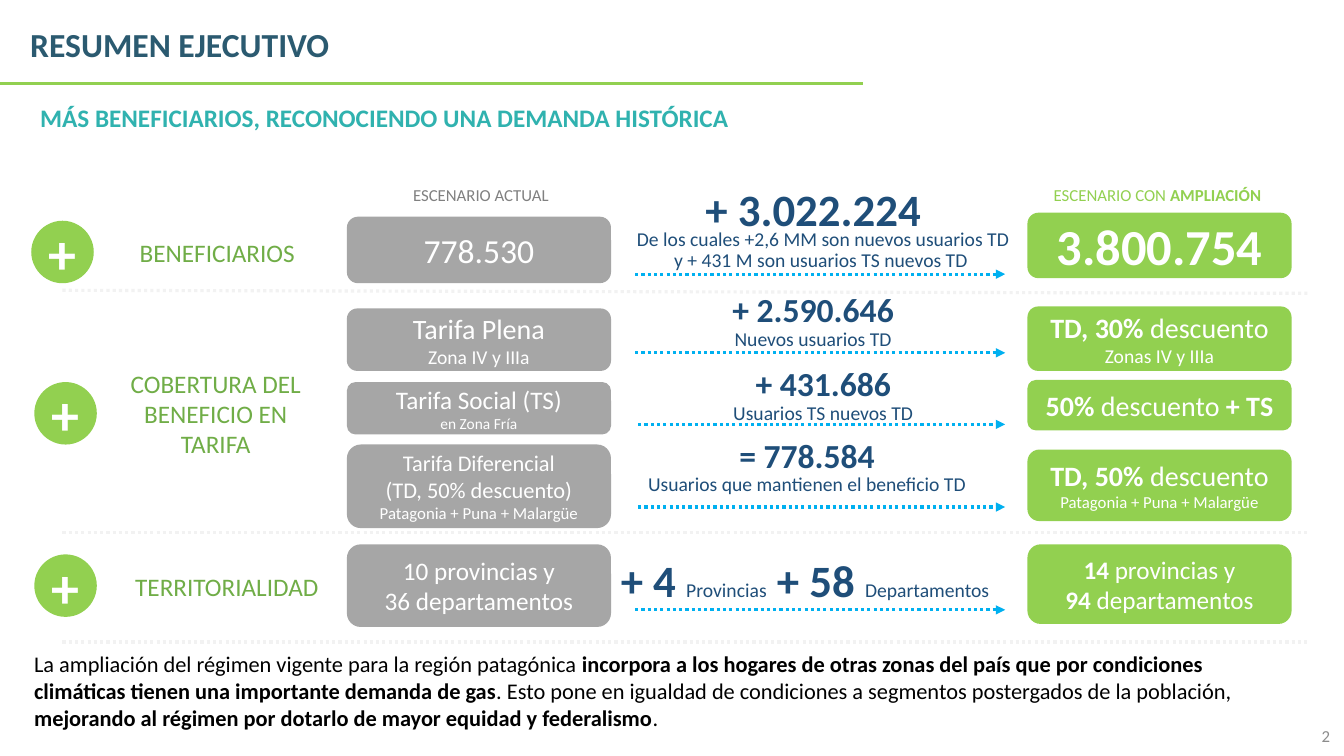
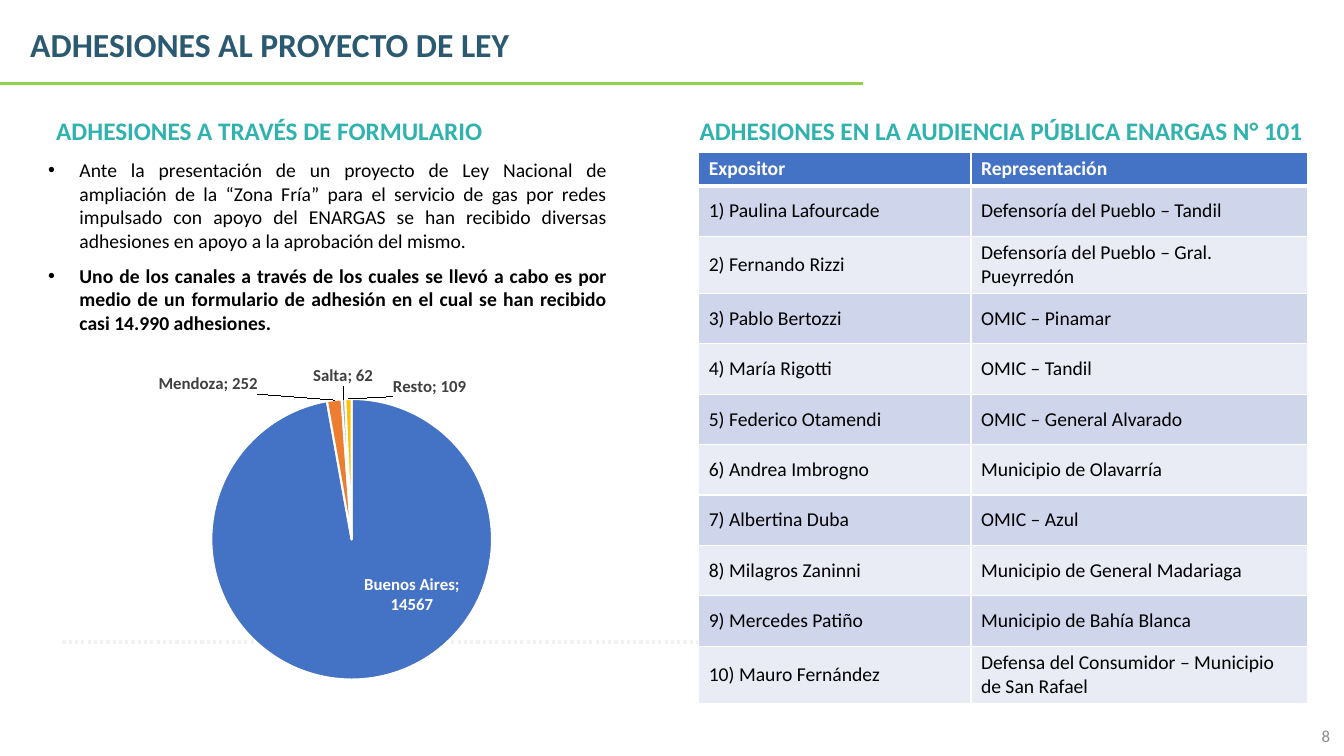
"""Build two slides on the extension of the cold-zone gas tariff."""
import pptx
import pptx.chart.data
import pptx.dml.color
import pptx.enum.chart
import pptx.enum.dml
import pptx.enum.shapes
import pptx.enum.text
import pptx.oxml
import pptx.oxml.ns
import pptx.util

Inches, Pt = pptx.util.Inches, pptx.util.Pt
ALIGN = pptx.enum.text.PP_ALIGN
ANCHOR = pptx.enum.text.MSO_ANCHOR
SHAPE = pptx.enum.shapes.MSO_SHAPE
LABEL = pptx.enum.chart.XL_LABEL_POSITION

FONT = "Calibri"
WHITE, BLACK, GREEN, GRAY = "FFFFFF", "000000", "92D050", "A6A6A6"
NAVY, TITLE, TEAL, LEAF = "1F4E79", "2B5A70", "30B2AF", "70AD47"
SKY, PALE, BLUE = "00B0F0", "F2F2F2", "4472C4"
BANDS = ("CFD5EA", "E9EBF5")

BIG, SMALL = {"size": 32, "bold": True}, {"size": 14, "bold": False}
BOLD = {"bold": True}

CURRENT_LEFT, EXTENDED_LEFT, CARD_WIDTH = 3.44, 10.19, 2.62
BADGE_SIZE = 0.62
RULE_LEFT, RULE_RIGHT, LAST_RULE = 0.62, 12.97, 6.37
GROWTH_WIDTH, GROWTH_HEIGHT, ARROW_RIGHT = 4.45, 0.64, 9.97

CURRENT = [
    (2.15, 0.66, 24, ["778.530"]),
    (3.06, 0.62, 20, ["Tarifa Plena", [("Zona IV y IIIa", {"size": 14})]]),
    (3.79, 0.52, 18, ["Tarifa Social (TS)", [("en Zona Fría", {"size": 11})]]),
    (4.41, 0.83, 16, ["Tarifa Diferencial", "(TD, 50% descuento)",
                      [("Patagonia + Puna + Malargüe", {"size": 12})]]),
    (5.4, 0.82, 18, ["10 provincias y", "36 departamentos"]),
]
EXTENDED = [
    (2.11, 0.65, 36, [[("3.800.754", BOLD)]]),
    (3.04, 0.64, 20, [[("TD, 30% ", BOLD), "descuento"], [("Zonas IV y IIIa", {"size": 14})]]),
    (3.77, 0.5, 20, [[("50% ", BOLD), "descuento", (" + TS", BOLD)]]),
    (4.46, 0.71, 20, [[("TD, 50% ", BOLD), "descuento"],
                      [("Patagonia + Puna + Malargüe", {"size": 12})]]),
    (5.4, 0.79, 18, [[("14", BOLD), " provincias y"], [("94", BOLD), " departamentos"]]),
]
GROWTH = [
    (5.84, 1.75, None, [[("+ 3.022.224", BIG)]]),
    (5.84, 2.95, 15, ["+ 2.590.646", [("Nuevos usuarios TD", SMALL)]]),
    (5.94, 3.68, 15, ["+ 431.686", [("Usuarios TS nuevos TD", SMALL)]]),
    (5.78, 4.39, 15, ["= 778.584", [("Usuarios que mantienen el beneficio TD", SMALL)]]),
    (5.76, 5.43, None, [[("+ 4 ", BIG), ("Provincias", SMALL), (" + 58 ", BIG),
                         ("Departamentos", SMALL)]]),
]
GROWTH_NOTE = "De los cuales +2,6 MM son nuevos usuarios TD y + 431 M son usuarios TS nuevos TD "
ARROWS = [(6.3, 2.72), (6.3, 3.5), (6.33, 4.21), (6.33, 5.03), (6.3, 6.05)]
TOPICS = [
    (0.31, 2.19, (0.92, 2.31, 2.47, 0.4), "BENEFICIARIOS"),
    (0.34, 3.79, (1.02, 3.6, 2.24, 1.01), "COBERTURA DEL BENEFICIO EN TARIFA"),
    (0.34, 5.5, (0.94, 5.62, 2.62, 0.4), "TERRITORIALIDAD"),
]
SCENARIOS = [
    ((3.48, 1.78, 2.58, 0.3), "808080", ["ESCENARIO ACTUAL"]),
    ((10.08, 1.78, 2.8, 0.3), GREEN, [["ESCENARIO CON ", ("AMPLIACIÓN", BOLD)]]),
]
CONCLUSION = [[
    "La ampliación del régimen vigente para la región patagónica ",
    ("incorpora a los hogares de otras zonas del país que por condiciones climáticas "
     "tienen una importante demanda de gas", BOLD),
    ". Esto pone en igualdad de condiciones a segmentos postergados de la población, ",
    ("mejorando al régimen por dotarlo de mayor equidad y federalismo", BOLD),
    ".",
]]

FORM_POINTS = [
    "Ante la presentación de un proyecto de Ley Nacional de ampliación de la “Zona Fría” "
    "para el servicio de gas por redes impulsado con apoyo del ENARGAS se han recibido "
    "diversas adhesiones en apoyo a la aprobación del mismo.",
    [("Uno de los canales a través de los cuales se llevó a cabo es por medio de un formulario "
      "de adhesión en el cual se han recibido casi 14.990 adhesiones.", BOLD)],
]
SPEAKERS = [
    ("Expositor", "Representación"),
    ("1) Paulina Lafourcade", "Defensoría del Pueblo – Tandil"),
    ("2) Fernando Rizzi", "Defensoría del Pueblo – Gral. Pueyrredón"),
    ("3) Pablo Bertozzi", "OMIC – Pinamar"),
    ("4) María Rigotti", "OMIC – Tandil"),
    ("5) Federico Otamendi", "OMIC – General Alvarado"),
    ("6) Andrea Imbrogno", "Municipio de Olavarría"),
    ("7) Albertina Duba", "OMIC – Azul"),
    ("8) Milagros Zaninni", "Municipio de General Madariaga"),
    ("9) Mercedes Patiño", "Municipio de Bahía Blanca"),
    ("10) Mauro Fernández", "Defensa del Consumidor – Municipio de San Rafael"),
]
COLUMN_WIDTHS = (2.7, 3.34)
HEADER_HEIGHT, ROW_HEIGHT, TALL_ROW, TALL_ROWS = 0.32, 0.5, 0.54, (2, 10)
PROVINCES = [
    ("Buenos Aires", 14567, BLUE, WHITE, LABEL.CENTER, (0.1, -0.04)),
    ("Mendoza", 252, "ED7D31", "404040", LABEL.OUTSIDE_END, (-0.14, 0)),
    ("Salta", 62, "A5A5A5", "404040", LABEL.OUTSIDE_END, (0, -0.02)),
    ("Resto", 109, "FFC000", "404040", LABEL.OUTSIDE_END, (0.15, 0.01)),
]
PLOT_AREA = {"x": 0.25, "y": 0.12, "w": 0.52, "h": 0.78}


def color(value):
    return pptx.dml.color.RGBColor.from_string(value)


def element(name, attributes="", body=""):
    namespace = pptx.oxml.ns.nsdecls(name.split(":")[0])
    return pptx.oxml.parse_xml(f"<{name} {namespace} {attributes}>{body}</{name}>")


def write(frame, paragraphs, size=18, tint=BLACK, bold=False, align=ALIGN.LEFT,
          anchor=ANCHOR.TOP, spacing=None, after=None, bullet=False, inset=None):
    frame.word_wrap = True
    frame.vertical_anchor = anchor
    if inset is not None:
        frame.margin_left = frame.margin_right = Inches(inset)
        frame.margin_top = frame.margin_bottom = Inches(inset)
    for index, runs in enumerate(paragraphs):
        para = frame.paragraphs[0] if index == 0 else frame.add_paragraph()
        if bullet:
            properties = para._p.get_or_add_pPr()
            properties.set("marL", str(Inches(0.31)))
            properties.set("indent", str(Inches(-0.31)))
            properties.append(element("a:buFont", 'typeface="Arial"'))
            properties.append(element("a:buChar", 'char="•"'))
        para.alignment = align
        if spacing:
            para.line_spacing = spacing
        if after:
            para.space_after = Pt(after)
        for run in [runs] if isinstance(runs, str) else runs:
            text, style = (run, {}) if isinstance(run, str) else run
            span = para.add_run()
            span.text = text
            span.font.name = FONT
            span.font.size = Pt(style.get("size", size))
            span.font.bold = style.get("bold", bold)
            span.font.color.rgb = color(tint)


def add_text(page, place, paragraphs, **style):
    box = page.shapes.add_textbox(*map(Inches, place))
    write(box.text_frame, paragraphs, **style)


def add_card(page, kind, place, fill, paragraphs, **style):
    card = page.shapes.add_shape(kind, *map(Inches, place))
    card.shadow.inherit = False
    card.fill.solid()
    card.fill.fore_color.rgb = color(fill)
    card.line.fill.background()
    write(card.text_frame, paragraphs, tint=WHITE, align=ALIGN.CENTER,
          anchor=ANCHOR.MIDDLE, **style)


def add_line(page, start, end, tint, dotted=True, arrow=False):
    line = page.shapes.add_connector(pptx.enum.shapes.MSO_CONNECTOR.STRAIGHT,
                                     *map(Inches, start + end))
    line.line.color.rgb = color(tint)
    line.line.width = Pt(2.25)
    if dotted:
        line.line.dash_style = pptx.enum.dml.MSO_LINE.ROUND_DOT
    properties = line._element.spPr
    if arrow:
        outline = properties.find(pptx.oxml.ns.qn("a:ln"))
        outline.append(element("a:tailEnd", 'type="triangle"'))
    properties.append(element("a:effectLst"))


def add_heading(page, place, text, align=ALIGN.JUSTIFY, inset=None):
    add_text(page, place, [text], size=18, tint=TEAL, bold=True, align=align, inset=inset)


def add_page(deck, title, number):
    page = deck.slides.add_slide(deck.slide_layouts[5])
    heading = page.shapes.title
    heading.left, heading.top, heading.width, heading.height = map(
        Inches, (0.2, -0.08, 11.5, 1.08))
    write(heading.text_frame, [title], size=24, tint=TITLE, bold=True,
          anchor=ANCHOR.MIDDLE, spacing=0.9)
    add_line(page, (0, 0.83), (8.56, 0.83), GREEN, dotted=False)
    add_line(page, (RULE_LEFT, LAST_RULE), (RULE_RIGHT, LAST_RULE), PALE)
    add_text(page, (10.29, 7.1, 3, 0.4), [number], size=12, tint="8C8C8C",
             align=ALIGN.RIGHT, anchor=ANCHOR.MIDDLE)
    return page


def build_summary(deck):
    page = add_page(deck, "RESUMEN EJECUTIVO", "2")
    add_heading(page, (0.3, 0.97, 11.5, 0.4),
                "MÁS BENEFICIARIOS, RECONOCIENDO UNA DEMANDA HISTÓRICA")
    for start, end in ((2.88, 2.91), (5.28, 5.28)):
        add_line(page, (RULE_LEFT, start), (RULE_RIGHT, end), PALE)
    for place, tint, label in SCENARIOS:
        add_text(page, place, label, size=12, tint=tint, align=ALIGN.CENTER)
    for left, top, place, topic in TOPICS:
        add_card(page, SHAPE.OVAL, (left, top, BADGE_SIZE, BADGE_SIZE), GREEN, ["+"],
                 size=40, bold=True, inset=0)
        add_text(page, place, [topic], size=18, tint=LEAF, align=ALIGN.CENTER)
    for left, fill, cards in ((CURRENT_LEFT, GRAY, CURRENT), (EXTENDED_LEFT, GREEN, EXTENDED)):
        for top, height, size, paragraphs in cards:
            add_card(page, SHAPE.ROUNDED_RECTANGLE, (left, top, CARD_WIDTH, height), fill,
                     paragraphs, size=size)
    middle = {"tint": NAVY, "align": ALIGN.CENTER, "anchor": ANCHOR.MIDDLE}
    for left, top, leading, paragraphs in GROWTH:
        add_text(page, (left, top, GROWTH_WIDTH, GROWTH_HEIGHT), paragraphs, size=24, bold=True,
                 spacing=leading and Pt(leading), **middle)
    add_text(page, (6.16, 2.16, 4.01, GROWTH_HEIGHT), [GROWTH_NOTE], size=14,
             spacing=Pt(15), **middle)
    for left, top in ARROWS:
        add_line(page, (left, top), (ARROW_RIGHT, top), SKY, arrow=True)
    add_text(page, (0.24, 6.4, 12.65, 1.09), CONCLUSION, size=16)


def add_speakers(page):
    heights = [HEADER_HEIGHT] + [TALL_ROW if row in TALL_ROWS else ROW_HEIGHT
                                 for row in range(1, len(SPEAKERS))]
    place = (6.93, 1.51, sum(COLUMN_WIDTHS), sum(heights))
    table = page.shapes.add_table(len(SPEAKERS), len(COLUMN_WIDTHS), *map(Inches, place)).table
    for column, width in zip(table.columns, COLUMN_WIDTHS):
        column.width = Inches(width)
    for index, (names, height) in enumerate(zip(SPEAKERS, heights)):
        table.rows[index].height = Inches(height)
        header = index == 0
        for column, text in enumerate(names):
            cell = table.cell(index, column)
            write(cell.text_frame, [text], size=14, tint=WHITE if header else BLACK, bold=header)
            cell.vertical_anchor = ANCHOR.MIDDLE
            properties = cell._tc.get_or_add_tcPr()
            for side in "LRTB":
                thick = (header and side == "B") or (index == 1 and side == "T")
                properties.append(element(
                    f"a:ln{side}", f'w="{Pt(3 if thick else 1)}"',
                    f'<a:solidFill><a:srgbClr val="{WHITE}"/></a:solidFill>'))
            cell.fill.solid()
            cell.fill.fore_color.rgb = color(BLUE if header else BANDS[(index - 1) % 2])


def manual_layout(values, inner=False):
    target = '<c:layoutTarget val="inner"/>' if inner else ""
    modes = '<c:xMode val="edge"/><c:yMode val="edge"/>' if inner else ""
    sizes = "".join(f'<c:{key} val="{value}"/>' for key, value in values.items())
    return element("c:layout", body=f"<c:manualLayout>{target}{modes}{sizes}</c:manualLayout>")


def add_pie(page):
    data = pptx.chart.data.CategoryChartData()
    data.categories = [province[0] for province in PROVINCES]
    data.add_series("Adhesiones", [province[1] for province in PROVINCES])
    chart = page.shapes.add_chart(pptx.enum.chart.XL_CHART_TYPE.PIE,
                                  *map(Inches, (0.75, 3.53, 5.37, 3.57)), data).chart
    chart.has_legend = chart.has_title = False
    chart.font.name, chart.font.size = FONT, Pt(10)
    area = chart._chartSpace.chart.plotArea
    for layout in area.findall(pptx.oxml.ns.qn("c:layout")):
        area.remove(layout)
    area.insert(0, manual_layout(PLOT_AREA, inner=True))
    series = chart.plots[0].series[0]
    for index, (_, _, fill, tint, position, shift) in enumerate(PROVINCES):
        point = series.points[index]
        point.format.fill.solid()
        point.format.fill.fore_color.rgb = color(fill)
        point.format.line.color.rgb = color(WHITE)
        point.format.line.width = Pt(1.5)
        label = point.data_label
        label.font.name, label.font.size, label.font.bold = FONT, Pt(12), True
        label.font.color.rgb = color(tint)
        label.position = position
        node = series._element.xpath(f'.//c:dLbl[c:idx/@val="{index}"]')[0]
        node.insert(1, manual_layout(dict(zip("xy", shift))))
        node.find(pptx.oxml.ns.qn("c:showCatName")).set("val", "1")
        node.append(element("c:separator", body="; "))


def build_support(deck):
    page = add_page(deck, "ADHESIONES AL PROYECTO DE LEY", "8")
    add_heading(page, (0.46, 1.09, 6.04, 0.4), "ADHESIONES A TRAVÉS DE FORMULARIO")
    add_heading(page, (6.83, 1.14, 6.2, 0.3),
                "ADHESIONES EN LA AUDIENCIA PÚBLICA ENARGAS N° 101", align=ALIGN.CENTER, inset=0)
    add_text(page, (0.38, 1.52, 5.74, 1.86), FORM_POINTS, size=14, align=ALIGN.JUSTIFY,
             after=8, bullet=True)
    add_speakers(page)
    add_pie(page)


def main():
    deck = pptx.Presentation()
    deck.slide_width, deck.slide_height = Inches(13.33), Inches(7.5)
    build_summary(deck)
    build_support(deck)
    deck.save("out.pptx")


if __name__ == "__main__":
    main()
